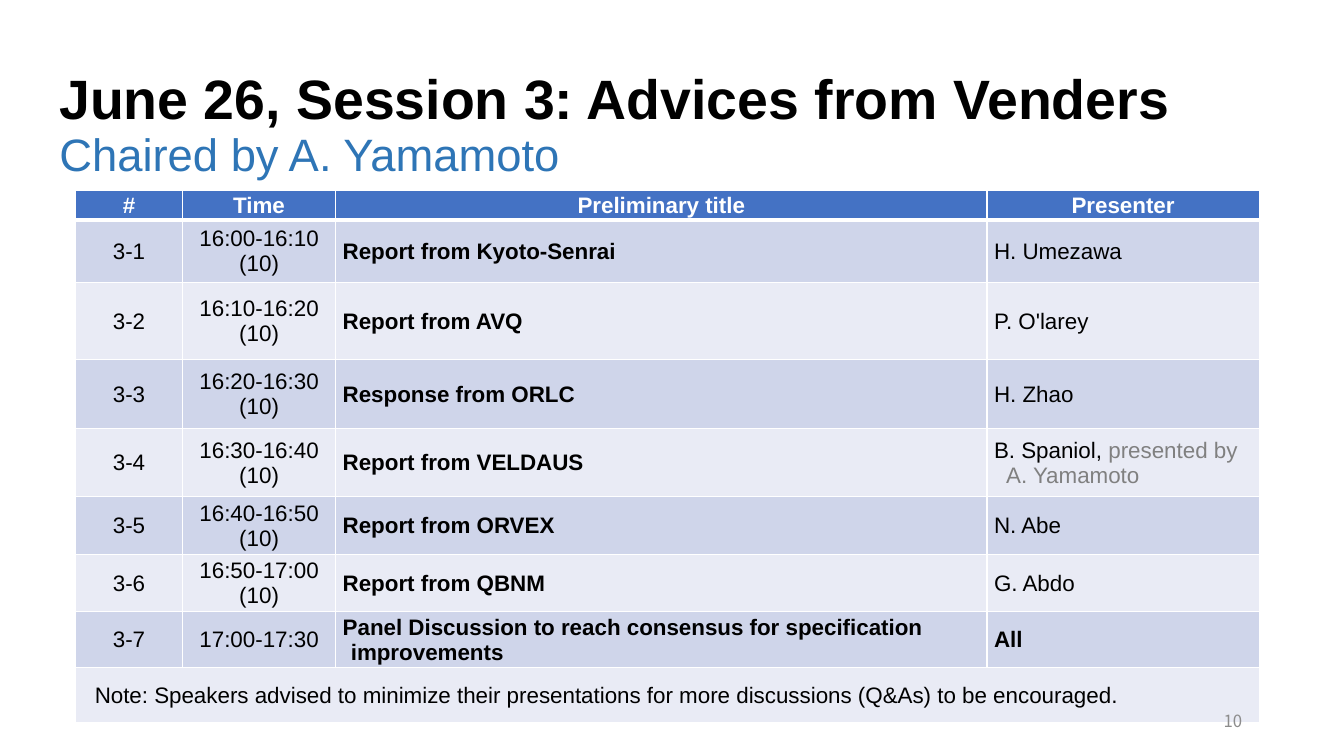
from dataclasses import dataclass

from lxml.etree import SubElement
from pptx import Presentation
from pptx.dml.color import RGBColor
from pptx.enum.text import MSO_ANCHOR as Anchor, PP_ALIGN as Align
from pptx.oxml.ns import qn
from pptx.util import Inches, Pt


@dataclass(frozen=True)
class Theme:
    font: str = "Arial"
    number_font: str = "Noto Sans CJK JP"
    title_size: float = 39.6
    subtitle_size: float = 32.4
    table_size: float = 16
    number_size: float = 12
    black: str = "000000"
    white: str = "FFFFFF"
    subtitle: str = "2E75B6"
    header: str = "4472C4"
    bands: tuple = ("CFD5EA", "E9EBF5")
    muted: str = "808080"
    number: str = "8C8C8C"


theme = Theme()


def style_run(run, size, color, bold=False, name=theme.font):
    run.font.name = name
    run.font.size = Pt(size)
    run.font.bold = bold
    run.font.color.rgb = RGBColor.from_string(color)


def dress_cell(cell, fill, bottom_width):
    """Set insets, white borders and fill of a table cell."""
    cell.vertical_anchor = Anchor.MIDDLE
    cell.margin_left = cell.margin_right = cell.margin_top = Inches(0.01)
    cell.margin_bottom = 0
    properties = cell._tc.get_or_add_tcPr()
    for side, width in (("L", 1), ("R", 1), ("T", 1), ("B", bottom_width)):
        line = SubElement(properties, qn(f"a:ln{side}"), w=str(Pt(width)))
        SubElement(SubElement(line, qn("a:solidFill")), qn("a:srgbClr"), val=theme.white)
    cell.fill.solid()
    cell.fill.fore_color.rgb = RGBColor.from_string(fill)


presentation = Presentation()
presentation.slide_width = Inches(13.33)
presentation.slide_height = Inches(7.5)
slide = presentation.slides.add_slide(presentation.slide_layouts[6])

# Title
title = slide.shapes.add_textbox(Inches(0.49), Inches(0.62), Inches(11.99), Inches(1.27))
title.text_frame.word_wrap = True
title.text_frame.vertical_anchor = Anchor.MIDDLE
paragraph = title.text_frame.paragraphs[0]
paragraph.text = "June 26, Session 3: Advices from Venders\vChaired by A. Yamamoto"
paragraph.line_spacing = 0.9
heading, chair = paragraph.runs
style_run(heading, theme.title_size, theme.black, bold=True)
style_run(chair, theme.subtitle_size, theme.subtitle)

# Session table
NOTE = ("Note: Speakers advised to minimize their presentations "
        "for more discussions (Q&As) to be encouraged.")
rows = [
    ("#", "Time", "Preliminary title", "Presenter"),
    ("3-1", "16:00-16:10\n(10)", "Report from Kyoto-Senrai", "H. Umezawa"),
    ("3-2", "16:10-16:20\n(10)", "Report from AVQ", "P. O'larey"),
    ("3-3", "16:20-16:30\n(10)", "Response from ORLC", "H. Zhao"),
    ("3-4", "16:30-16:40\n(10)", "Report from VELDAUS", "B. Spaniol, \nA. Yamamoto"),
    ("3-5", "16:40-16:50\n(10)", "Report from ORVEX", "N. Abe"),
    ("3-6", "16:50-17:00\n(10)", "Report from QBNM", "G. Abdo"),
    ("3-7", "17:00-17:30",
     "Panel Discussion to reach consensus for specification\nimprovements", "All"),
    (NOTE, "", "", ""),
]
column_widths = (1.06, 1.52, 6.46, 2.7)
row_heights = (0.29, 0.62, 0.77, 0.68, 0.68, 0.57, 0.57, 0.55, 0.55)
last_row = len(rows) - 1

table = slide.shapes.add_table(
    len(rows), len(column_widths),
    Inches(0.75), Inches(1.89), Inches(11.74), Inches(5.28)).table
for column, width in zip(table.columns, column_widths):
    column.width = Inches(width)
for row, height in zip(table.rows, row_heights):
    row.height = Inches(height)

for row_index, texts in enumerate(rows):
    is_header = row_index == 0
    is_note = row_index == last_row
    fill = theme.header if is_header else theme.bands[(row_index - 1) % 2]
    for column_index, text in enumerate(texts):
        cell = table.cell(row_index, column_index)
        dress_cell(cell, fill, bottom_width=3 if is_header else 1)
        cell.text_frame.text = text
        centred = is_header or (column_index < 2 and not is_note)
        bold = is_header or column_index == 2 or text == "All"
        for line_index, paragraph in enumerate(cell.text_frame.paragraphs):
            paragraph.alignment = Align.CENTER if centred else Align.LEFT
            if not centred:
                hanging = column_index * 0.04 if line_index else 0
                indent = 0.18 if is_note else 0.06 + hanging
                paragraph._p.get_or_add_pPr().set("marL", str(Inches(indent)))
            for run in paragraph.runs:
                style_run(run, theme.table_size, theme.white if is_header else theme.black, bold)

table.cell(last_row, 0).merge(table.cell(last_row, len(column_widths) - 1))

# Stand-in speaker of talk 3-4
speaker, stand_in = table.cell(4, 3).text_frame.paragraphs
presented_by = speaker.add_run()
presented_by.text = "presented by"
for run in (presented_by, stand_in.runs[0]):
    style_run(run, theme.table_size, theme.muted)

# Slide number
number = slide.shapes.add_textbox(Inches(9.42), Inches(6.95), Inches(3), Inches(0.4))
number.text_frame.word_wrap = True
number.text_frame.vertical_anchor = Anchor.MIDDLE
paragraph = number.text_frame.paragraphs[0]
paragraph.text = "10"
paragraph.alignment = Align.RIGHT
style_run(paragraph.runs[0], theme.number_size, theme.number, name=theme.number_font)

presentation.save("out.pptx")
